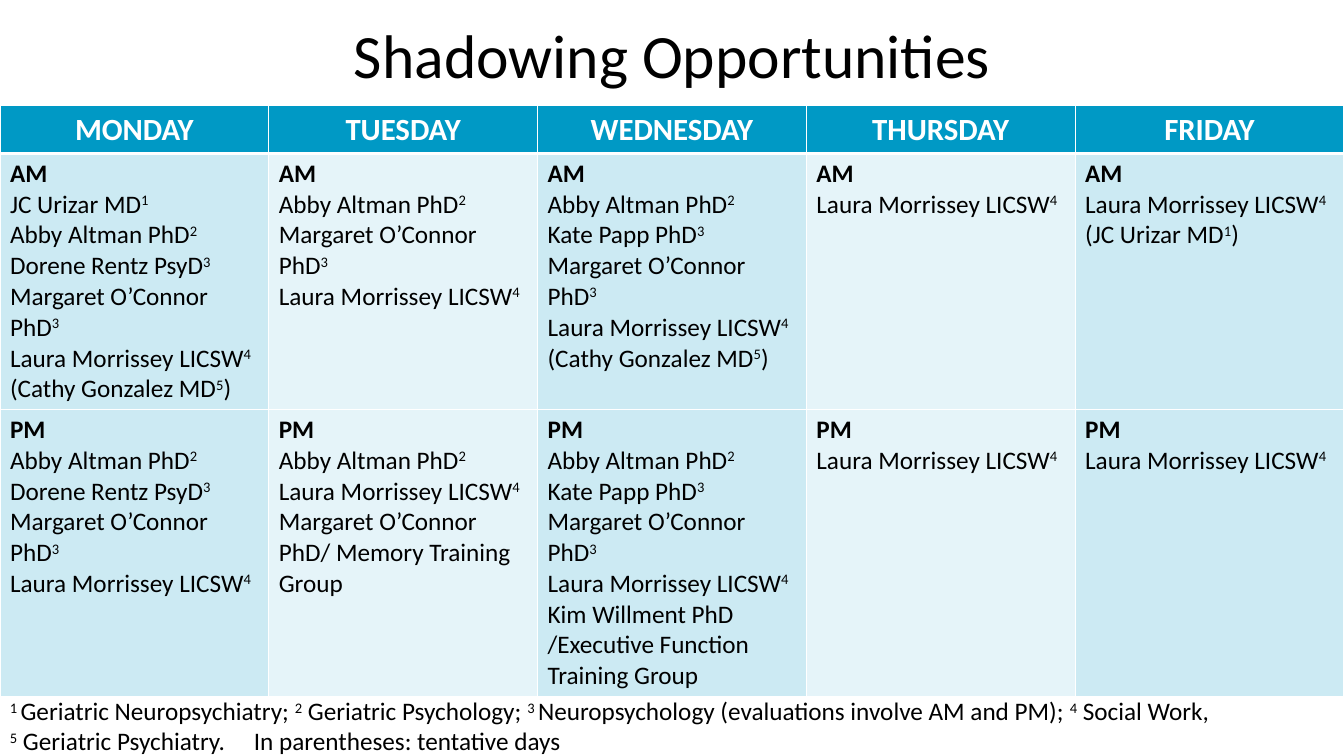
"""Build the weekly shadowing timetable slide."""
import lxml.etree
import pptx
import pptx.dml.color
import pptx.enum.text
import pptx.oxml.ns
import pptx.util

Inches = pptx.util.Inches
Pt = pptx.util.Pt
Align = pptx.enum.text.PP_ALIGN
qn = pptx.oxml.ns.qn

BLUE = pptx.dml.color.RGBColor(0x00, 0x99, 0xC5)
BLACK = pptx.dml.color.RGBColor(0, 0, 0)
WHITE = pptx.dml.color.RGBColor(255, 255, 255)
FONT = "Calibri"

URIZAR = "JC Urizar MD^1"
ALTMAN = "Abby Altman PhD^2"
RENTZ = "Dorene Rentz PsyD^3"
PAPP = "Kate Papp PhD^3"
CONNOR = "Margaret O’Connor PhD^3"
LAURA = "Laura Morrissey LICSW^4"
CATHY = "(Cathy Gonzalez MD^5^)"
MEMORY = "Margaret O’Connor PhD/ Memory Training Group"
KIM = "Kim Willment PhD /Executive Function Training Group"

DAYS = ["MONDAY", "TUESDAY", "WEDNESDAY", "THURSDAY", "FRIDAY"]
SHIFTS = {
    "AM": [
        [URIZAR, ALTMAN, RENTZ, CONNOR, LAURA, CATHY],
        [ALTMAN, CONNOR, LAURA],
        [ALTMAN, PAPP, CONNOR, LAURA, CATHY],
        [LAURA],
        [LAURA, f"({URIZAR}^)"],
    ],
    "PM": [
        [ALTMAN, RENTZ, CONNOR, LAURA],
        [ALTMAN, LAURA, MEMORY],
        [ALTMAN, PAPP, CONNOR, LAURA, KIM],
        [LAURA],
        [LAURA],
    ],
}
NOTES = [
    "^1 ^Geriatric Neuropsychiatry; ^2^ Geriatric Psychology; "
    "^3 ^Neuropsychology (evaluations involve AM and PM); ^4^ Social Work,",
    "^5^ Geriatric Psychiatry.\tIn parentheses: tentative days",
]
HEIGHTS = [0.47, 2.5, 2.83]


def write(para, text, size, color=BLACK, bold=False):
    """Add text to a paragraph, raising every part between carets."""
    for index, part in enumerate(text.split("^")):
        if not part:
            continue
        run = para.add_run()
        run.text = part
        run.font.name = FONT
        run.font.size = Pt(size)
        run.font.bold = bold
        run.font.color.rgb = color
        if index % 2:
            run._r.get_or_add_rPr().set("baseline", "30000")


def lines(frame, count):
    """Return the given number of paragraphs of a text frame."""
    while len(frame.paragraphs) < count:
        frame.add_paragraph()
    return frame.paragraphs


def paint(cell, alpha, top, bottom):
    """Give a cell its white borders and its blue tint."""
    props = cell._tc.get_or_add_tcPr()
    for side, width in (("L", 1), ("R", 1), ("T", top), ("B", bottom)):
        line = lxml.etree.SubElement(props, qn(f"a:ln{side}"), w=str(Pt(width)))
        solid = lxml.etree.SubElement(line, qn("a:solidFill"))
        lxml.etree.SubElement(solid, qn("a:srgbClr"), val=str(WHITE))
    cell.fill.solid()
    cell.fill.fore_color.rgb = BLUE
    if alpha < 100:
        color = props.find(qn("a:solidFill")).find(qn("a:srgbClr"))
        lxml.etree.SubElement(color, qn("a:alpha"), val=str(alpha * 1000))


def add_title(slide, left, top, width, height):
    """Place the centred heading in its box."""
    box = slide.shapes.add_textbox(left, top, width, height)
    frame = box.text_frame
    frame.word_wrap = True
    frame.vertical_anchor = pptx.enum.text.MSO_ANCHOR.MIDDLE
    para = frame.paragraphs[0]
    para.alignment = Align.CENTER
    para.line_spacing = 0.9
    write(para, "Shadowing Opportunities", 44)


def add_week(slide, left, top, width, height):
    """Place the timetable with a column per day and a row per shift."""
    shape = slide.shapes.add_table(
        len(SHIFTS) + 1, len(DAYS), left, top, width, height)
    table = shape.table
    table.horz_banding = False
    for row, size in zip(table.rows, HEIGHTS):
        row.height = int(height * size / sum(HEIGHTS))
    for col, day in enumerate(DAYS):
        table.columns[col].width = int(width / len(DAYS))
        cell = table.cell(0, col)
        paint(cell, 100, 1, 3)
        para = cell.text_frame.paragraphs[0]
        para.alignment = Align.CENTER
        write(para, day, 22, WHITE, True)
        for row, (shift, staff) in enumerate(SHIFTS.items(), 1):
            cell = table.cell(row, col)
            paint(cell, 10 if col % 2 else 20, 3 if row == 1 else 1, 1)
            texts = [shift] + staff[col]
            paras = lines(cell.text_frame, len(texts))
            for para, text in zip(paras, texts):
                write(para, text, 18, bold=text == shift)


def add_notes(slide, left, top, width, height):
    """Place the key to the raised numbers."""
    box = slide.shapes.add_textbox(left, top, width, height)
    frame = box.text_frame
    frame.word_wrap = False
    frame.auto_size = pptx.enum.text.MSO_AUTO_SIZE.SHAPE_TO_FIT_TEXT
    for para, text in zip(lines(frame, len(NOTES)), NOTES):
        props = para._p.get_or_add_pPr()
        tabs = lxml.etree.SubElement(props, qn("a:tabLst"))
        lxml.etree.SubElement(
            tabs, qn("a:tab"), pos=str(Inches(2.42)), algn="l")
        write(para, text, 18)


def main():
    """Build and save the slide."""
    deck = pptx.Presentation()
    deck.slide_width = Inches(13.33)
    deck.slide_height = Inches(7.5)
    slide = deck.slides.add_slide(deck.slide_layouts[6])
    add_week(slide, 0, Inches(1.05), deck.slide_width, Inches(sum(HEIGHTS)))
    add_title(slide, Inches(0.92), Inches(-0.14), Inches(11.5), Inches(1.45))
    add_notes(slide, 0, Inches(6.85), Inches(12.34), Inches(0.71))
    deck.save("out.pptx")


if __name__ == "__main__":
    main()
